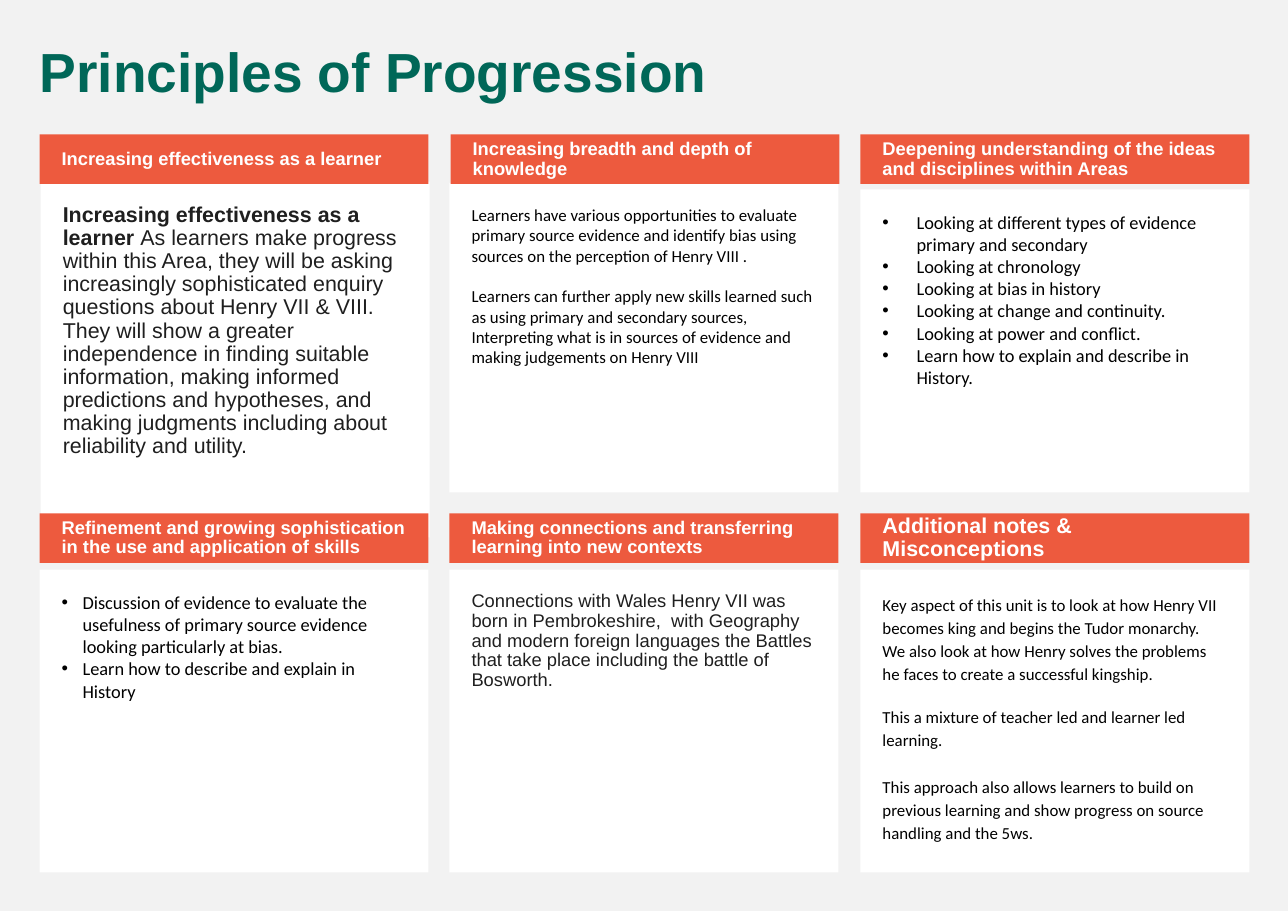
from lxml import etree
from pptx import Presentation
from pptx.dml.color import RGBColor
from pptx.enum.shapes import MSO_SHAPE
from pptx.enum.text import MSO_ANCHOR, MSO_AUTO_SIZE, PP_ALIGN
from pptx.oxml.ns import qn
from pptx.util import Inches, Pt

RECTANGLE = MSO_SHAPE.RECTANGLE
TOP = MSO_ANCHOR.TOP
MIDDLE = MSO_ANCHOR.MIDDLE
LEFT = PP_ALIGN.LEFT
NO_AUTOFIT = MSO_AUTO_SIZE.NONE

COLORS = {
    "background": "F2F2F2",
    "title": "006758",
    "heading": "ED5A3E",
    "card": "FFFFFF",
    "dark": "1F1F1F",
    "black": "000000",
}
CARD_WIDTH = 3.53
HEADING_HEIGHT = 0.45
HEADING_LEFTS = [0.36, 4.09, 7.81, 0.36, 4.08, 7.81]
HEADING_TOPS = [1.22, 4.66]

PANELS = [
    {
        "heading": "Increasing effectiveness as a learner",
        "card": (0.37, 1.65, 3.23),
        "font": "Arial", "size": 14, "color": "dark", "line": 0.9,
        "lead": "Increasing effectiveness as a learner ",
        "paragraphs": [
            "As learners make progress within this Area, they will be asking "
            "increasingly sophisticated enquiry questions about Henry VII & VIII. "
            "They will show a greater independence in finding suitable information, "
            "making informed predictions and hypotheses, and making judgments "
            "including about reliability and utility.",
        ],
    },
    {
        "heading": "Increasing breadth and depth of knowledge",
        "card": (4.08, 1.66, 2.81),
        "size": 11, "gaps": [0, 13.4],
        "paragraphs": [
            "Learners have various opportunities to evaluate primary source evidence "
            "and identify bias using sources on the perception of Henry VIII .",
            "Learners can further apply new skills learned such as using primary and "
            "secondary sources, Interpreting what is in sources of evidence and "
            "making judgements on Henry VIII",
        ],
    },
    {
        "heading": "Deepening understanding of the ideas and disciplines within Areas",
        "card": (7.81, 1.72, 2.75),
        "indent": 0.31,
        "paragraphs": [
            "Looking at different types of evidence primary and secondary",
            "Looking at chronology",
            "Looking at bias in history",
            "Looking at change and continuity.",
            "Looking at power and conflict.",
            "Learn how to explain and describe in History.",
        ],
    },
    {
        "heading": "Refinement and growing sophistication in the use and application of skills",
        "card": (0.36, 5.17, 2.75),
        "indent": 0.19,
        "paragraphs": [
            "Discussion of evidence to evaluate the usefulness of primary source "
            "evidence looking particularly at bias.",
            "Learn how to describe and explain in History",
        ],
    },
    {
        "heading": "Making connections and transferring learning into new contexts",
        "card": (4.08, 5.17, 2.75),
        "font": "Arial", "color": "dark", "line": 0.9,
        "paragraphs": [
            "Connections with Wales Henry VII was born in Pembrokeshire,  with "
            "Geography and modern foreign languages the Battles that take place "
            "including the battle of Bosworth.",
        ],
    },
    {
        "heading": "Additional notes & Misconceptions", "heading_size": 14,
        "card": (7.81, 5.17, 2.75),
        "size": 11, "line": 1.15, "gaps": [0, 12.6, 15.4],
        "paragraphs": [
            "Key aspect of this unit is to look at how Henry VII becomes king and "
            "begins the Tudor monarchy.  We also look at how Henry solves the "
            "problems he faces to create a successful kingship.",
            "This a mixture of teacher led and learner led learning.",
            "This approach also allows learners to build on previous learning and "
            "show progress on source handling and the 5ws.",
        ],
    },
]


def add_box(left, top, height, fill, anchor, margins):
    shape = slide.shapes.add_shape(
        RECTANGLE, Inches(left), Inches(top), Inches(CARD_WIDTH), Inches(height))
    shape.shadow.inherit = False
    shape.fill.solid()
    shape.fill.fore_color.rgb = RGBColor.from_string(COLORS[fill])
    shape.line.fill.background()
    frame = shape.text_frame
    frame.word_wrap = True
    frame.vertical_anchor = anchor
    frame.margin_left, frame.margin_top, frame.margin_right, frame.margin_bottom = [
        Inches(margin) for margin in margins]
    return frame


def add_text(paragraph, text, font, size, color, bold=False):
    paragraph.alignment = LEFT
    run = paragraph.add_run()
    run.text = text
    run.font.name = font
    run.font.size = Pt(size)
    run.font.bold = bold
    run.font.color.rgb = RGBColor.from_string(COLORS[color])


presentation = Presentation()
presentation.slide_width = Inches(11.69)
presentation.slide_height = Inches(8.27)
slide = presentation.slides.add_slide(presentation.slide_layouts[5])
slide.background.fill.solid()
slide.background.fill.fore_color.rgb = RGBColor.from_string(COLORS["background"])

title = slide.shapes.title
title.left, title.top = Inches(0.26), Inches(0.36)
title.width, title.height = Inches(11.08), Inches(0.65)
title.text_frame.auto_size = NO_AUTOFIT
title.text_frame.vertical_anchor = TOP
title_paragraph = title.text_frame.paragraphs[0]
title_paragraph.line_spacing = 0.9
add_text(title_paragraph, "Principles of Progression", "Arial", 36, "title", True)

for index, panel in enumerate(PANELS):
    left, top, height = panel["card"]
    card = add_box(left, top, height, "card", TOP, [0.2] * 4)
    font = panel.get("font", "Calibri")
    size = panel.get("size", 12)
    color = panel.get("color", "black")
    gaps = panel.get("gaps", [0] * len(panel["paragraphs"]))
    for number, (text, gap) in enumerate(zip(panel["paragraphs"], gaps)):
        paragraph = card.add_paragraph() if number else card.paragraphs[0]
        paragraph.line_spacing = panel.get("line", 1.0)
        paragraph.space_before = Pt(gap)
        if "lead" in panel:
            add_text(paragraph, panel["lead"], font, size, color, True)
        add_text(paragraph, text, font, size, color)
        if "indent" in panel:
            properties = paragraph._p.get_or_add_pPr()
            properties.set("marL", str(Inches(panel["indent"])))
            properties.set("indent", str(-Inches(panel["indent"])))
            etree.SubElement(properties, qn("a:buFont"), typeface="Arial")
            etree.SubElement(properties, qn("a:buChar"), char="•")

    heading = add_box(HEADING_LEFTS[index], HEADING_TOPS[index // 3], HEADING_HEIGHT,
                      "heading", MIDDLE, [0.2, 0.05, 0.1, 0.05])
    heading_paragraph = heading.paragraphs[0]
    heading_paragraph.line_spacing = 0.9
    add_text(heading_paragraph, panel["heading"], "Arial",
             panel.get("heading_size", 12), "card", True)

presentation.save("out.pptx")
